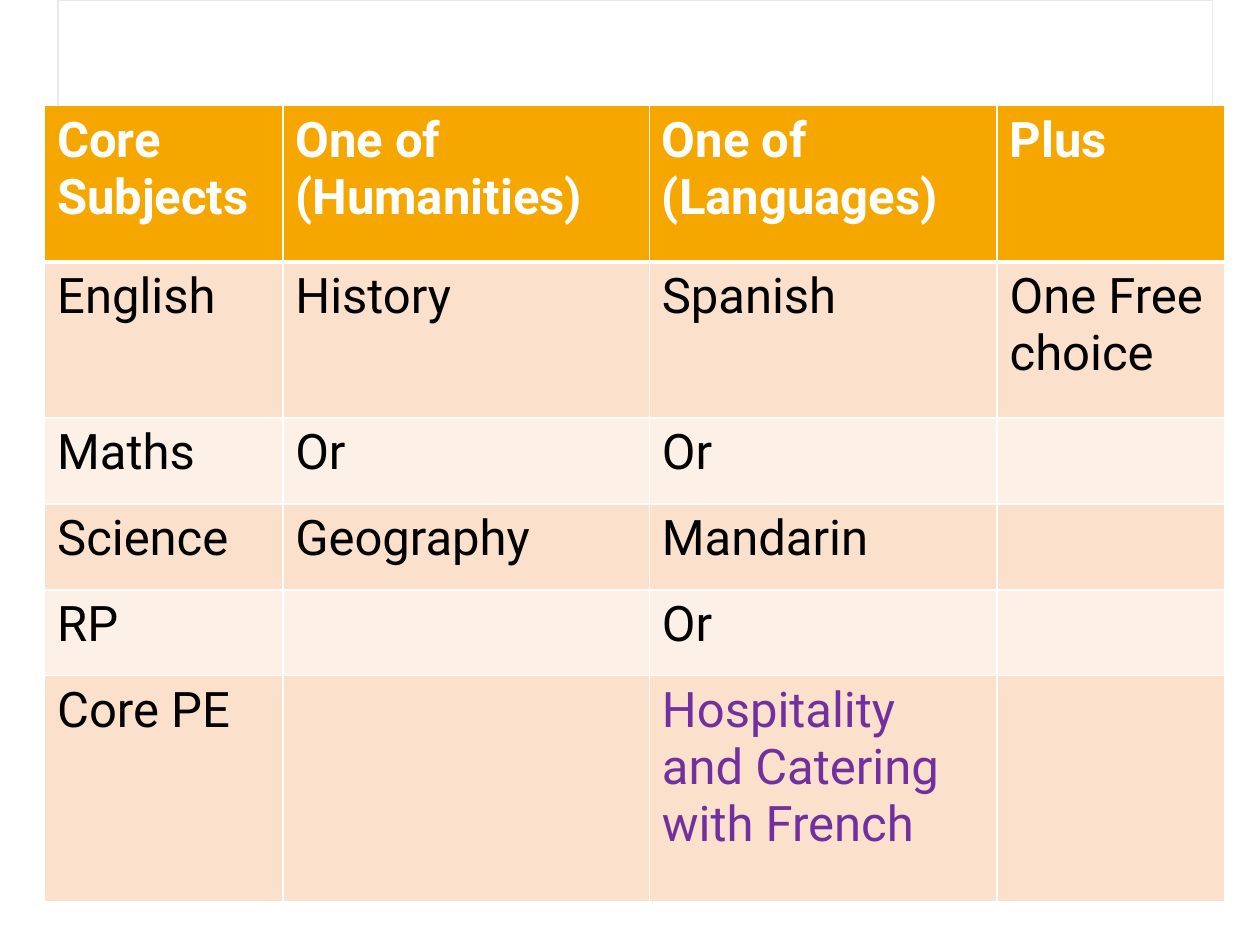
import pptx
import pptx.dml.color
import pptx.enum.shapes
import pptx.oxml
import pptx.oxml.ns
import pptx.util
from pptx.util import Cm

WHITE, AMBER, BLACK, PURPLE = "FFFFFF", "F5A700", "000000", "7030A0"
BANDS = ("FBE1CC", "FDF1E7")
WIDTHS = (4.8, 7.39, 7.01, 4.6)
HEIGHTS = (3.15, 3.15, 1.73, 1.73, 1.73, 4.55)
ROWS = (
    ("Core Subjects", "One of\n(Humanities)", "One of\n(Languages)", "Plus"),
    ("English", "History", "Spanish", "One Free choice"),
    ("Maths", "Or", "Or", ""),
    ("Science", "Geography", "Mandarin", ""),
    ("RP", "", "Or", ""),
    ("Core PE", "", "Hospitality and Catering with French", ""),
)


def color(code):
    return pptx.dml.color.RGBColor.from_string(code)


class Deck:
    def __init__(self, wide, high, font, size):
        self.file = pptx.Presentation()
        self.file.slide_width = Cm(wide)
        self.file.slide_height = Cm(high)
        self.slide = self.file.slides.add_slide(self.file.slide_layouts[6])
        self.font, self.size = font, size

    def panel(self, left, top, wide, high, fill, line):
        kind = pptx.enum.shapes.MSO_SHAPE.RECTANGLE
        box = self.slide.shapes.add_shape(
            kind, Cm(left), Cm(top), Cm(wide), Cm(high))
        box.shadow.inherit = False
        box.fill.solid()
        box.fill.fore_color.rgb = color(fill)
        box.line.color.rgb = color(line)
        box.line.width = pptx.util.Pt(0.75)

    def table(self, left, top, widths, heights):
        frame = self.slide.shapes.add_table(
            len(heights), len(widths), Cm(left), Cm(top),
            Cm(sum(widths)), Cm(sum(heights)))
        grid = frame.table
        for col, wide in zip(grid.columns, widths):
            col.width = Cm(wide)
        for row, high in zip(grid.rows, heights):
            row.height = Cm(high)
        return grid

    def border(self, cell, side, width):
        space = pptx.oxml.ns.nsdecls("a")
        cell._tc.get_or_add_tcPr().append(pptx.oxml.parse_xml(
            f'<a:ln{side} {space} w="{pptx.util.Pt(width)}"><a:solidFill>'
            f'<a:srgbClr val="{WHITE}"/></a:solidFill></a:ln{side}>'))

    def cell(self, cell, text, fill, ink, bold, top, base):
        """Style one cell; top and base are its border widths in points."""
        for side, width in (("L", 1), ("R", 1), ("T", top), ("B", base)):
            self.border(cell, side, width)
        cell.fill.solid()
        cell.fill.fore_color.rgb = color(fill)
        if not text:
            return
        for i, line in enumerate(text.split("\n")):
            frame = cell.text_frame
            para = frame.add_paragraph() if i else frame.paragraphs[0]
            run = para.add_run()
            run.text = line
            run.font.name = self.font
            run.font.size = pptx.util.Pt(self.size)
            run.font.bold = bold
            run.font.color.rgb = color(ink)


def main():
    deck = Deck(25.4, 19.05, "Roboto", 28)
    deck.panel(1.17, 0, 23.27, 5.6, WHITE, "E9E9E9")
    grid = deck.table(0.9, 2.13, WIDTHS, HEIGHTS)
    for r, row in enumerate(ROWS):
        head = r == 0
        fill = AMBER if head else BANDS[(r - 1) % 2]
        for c, text in enumerate(row):
            ink = WHITE if head else BLACK
            if text.startswith("Hospitality"):
                ink = PURPLE
            deck.cell(grid.cell(r, c), text, fill, ink, head,
                      3 if r == 1 else 1, 3 if head else 1)
    deck.file.save("out.pptx")


if __name__ == "__main__":
    main()
